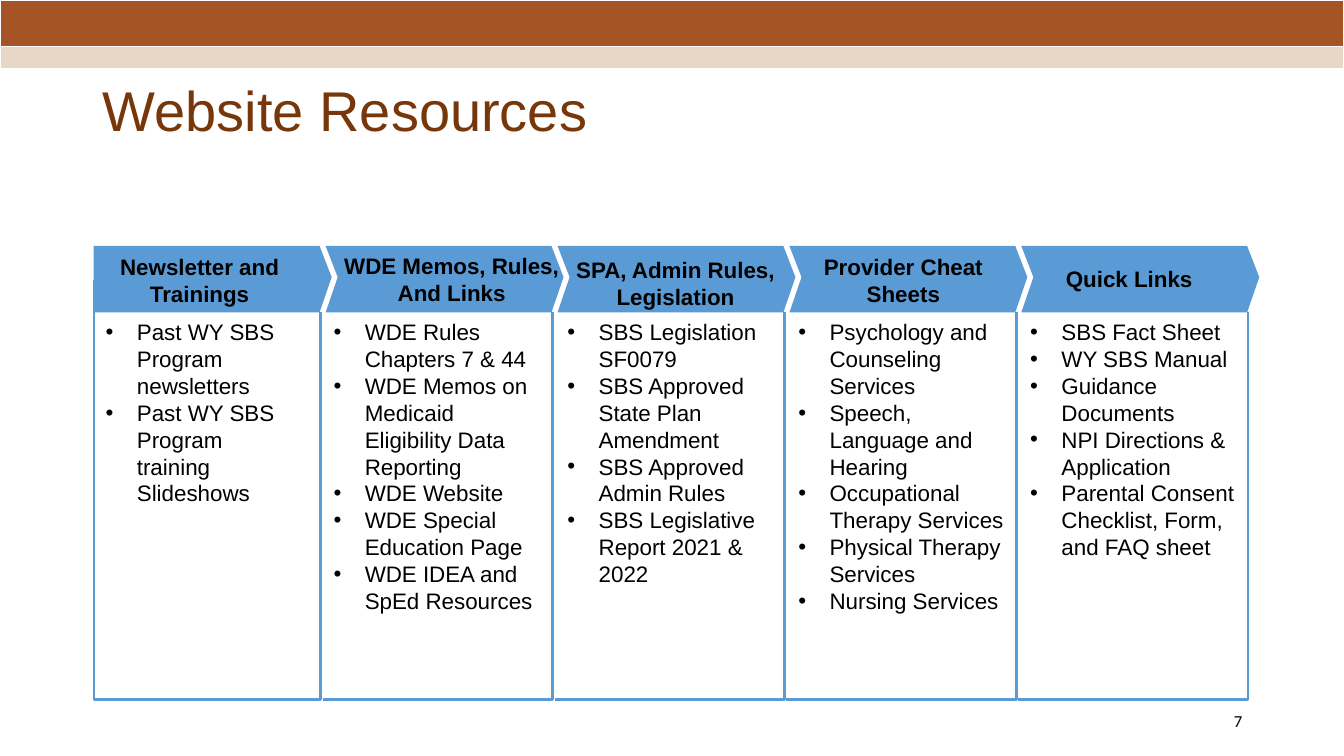
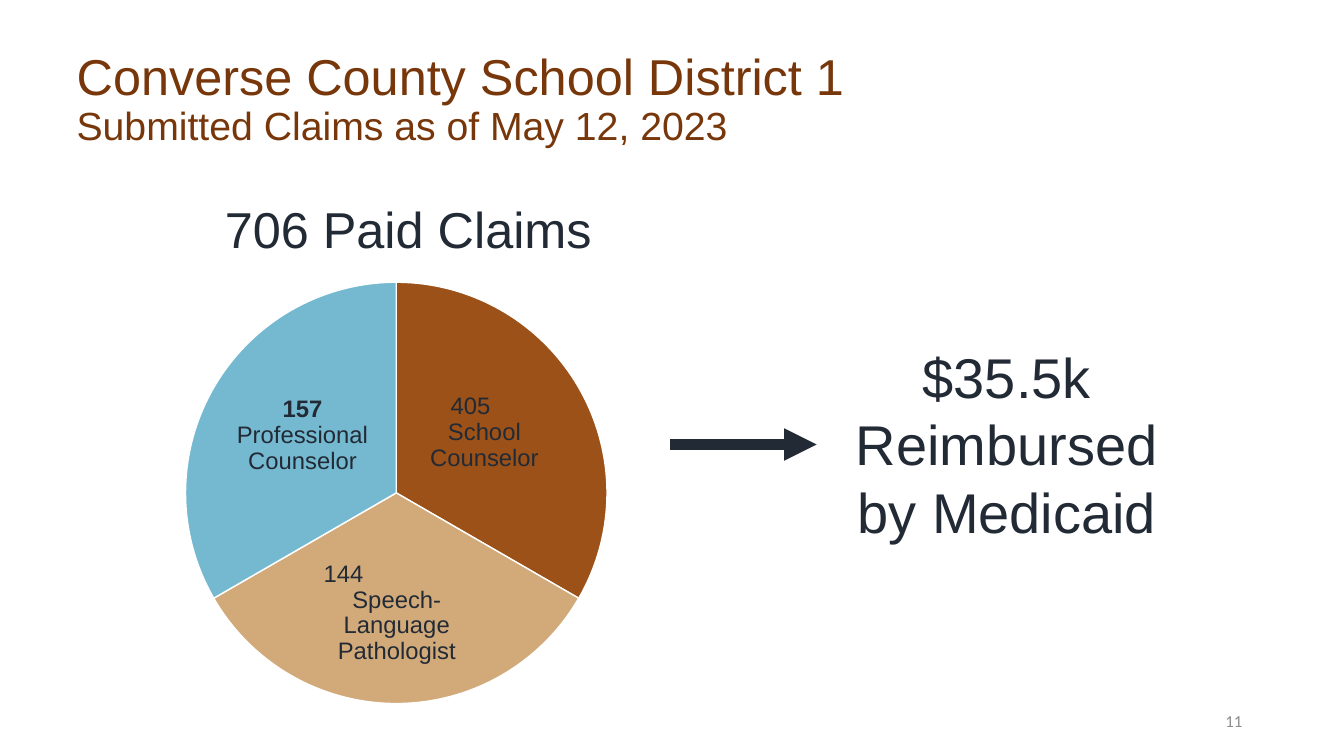
from pptx import Presentation
from pptx.dml.color import RGBColor
from pptx.enum.dml import MSO_LINE
from pptx.enum.shapes import MSO_CONNECTOR, MSO_SHAPE
from pptx.enum.text import MSO_ANCHOR, MSO_AUTO_SIZE, PP_ALIGN
from pptx.oxml.ns import qn
from pptx.util import Inches, Pt
from lxml.etree import SubElement

# Shared style
TITLE_BROWN = RGBColor(0x77, 0x37, 0x0B)
BAND_BROWN = RGBColor(0xA5, 0x55, 0x25)
BAND_SAND = RGBColor(0xE6, 0xD8, 0xC5)
BLUE = RGBColor(0x5B, 0x9B, 0xD5)
NAVY = RGBColor(0x22, 0x2A, 0x35)
GRAY = RGBColor(0x8C, 0x8C, 0x8C)
BLACK = RGBColor(0, 0, 0)
WHITE = RGBColor(0xFF, 0xFF, 0xFF)
SLIDE_W, SLIDE_H = 13.33, 7.5

# Content: heading lines, heading (centre, top), list (left, width), list items
RESOURCES = [
    (["Newsletter and", "Trainings"], (1.98, 2.51), (0.95, 2.13),
     ["Past WY SBS Program newsletters",
      "Past WY SBS Program training Slideshows"]),
    (["WDE Memos, Rules,", "And Links"], (4.48, 2.5), (3.21, 2.26),
     ["WDE Rules Chapters 7 & 44",
      "WDE Memos on Medicaid Eligibility Data Reporting",
      "WDE Website", "WDE Special Education Page",
      "WDE IDEA and SpEd Resources"]),
    (["SPA, Admin Rules,", "Legislation"], (6.7, 2.54), (5.53, 2.26),
     ["SBS Legislation SF0079", "SBS Approved State Plan Amendment",
      "SBS Approved Admin Rules", "SBS Legislative Report 2021 & 2022"]),
    (["Provider Cheat", "Sheets"], (8.96, 2.51), (7.82, 2.26),
     ["Psychology and Counseling Services", "Speech, Language and Hearing",
      "Occupational Therapy Services", "Physical Therapy Services",
      "Nursing Services"]),
    (["Quick Links"], (11.2, 2.63), (10.12, 2.23),
     ["SBS Fact Sheet", "WY SBS Manual", "Guidance Documents",
      "NPI Directions & Application",
      "Parental Consent Checklist, Form, and FAQ sheet"]),
]

# Colour, label box, count, count format, role
CLAIMS = [
    (RGBColor(0x9B, 0x51, 0x18), (4.09, 3.59, 1.43, 1.41), "405",
     dict(align=PP_ALIGN.LEFT, indent=0.36), "School Counselor"),
    (RGBColor(0xD2, 0xAA, 0x7A), (2.99, 5.44, 1.89, 1.29), "144",
     dict(align=PP_ALIGN.LEFT, indent=0.2), "Speech-Language Pathologist"),
    (RGBColor(0x75, 0xB9, 0xD1), (2.29, 3.63, 1.42, 1.39), "157",
     dict(bold=True), "Professional Counselor"),
]


def write(tf, lines, **fmt):
    """Fill a text frame; a line is text or (text, format overrides)."""
    for i, line in enumerate(lines):
        text, extra = (line, {}) if isinstance(line, str) else line
        f = {"size": 16, "color": BLACK, "font": "Arial", "bold": False,
             "align": PP_ALIGN.LEFT, "spacing": None, "bullet": False,
             "indent": 0, **fmt, **extra}
        p = tf.paragraphs[0] if i == 0 else tf.add_paragraph()
        pPr = p._p.get_or_add_pPr()
        if f["bullet"]:
            pPr.set("marL", str(Inches(0.31)))
            pPr.set("indent", str(Inches(-0.31)))
            SubElement(pPr, qn("a:buFont"), typeface="Arial")
            SubElement(pPr, qn("a:buChar"), char="•")
        elif f["indent"]:
            pPr.set("marL", str(Inches(f["indent"])))
        p.alignment = f["align"]
        if f["spacing"]:
            p.line_spacing = f["spacing"]
        r = p.add_run()
        r.text = text
        r.font.name, r.font.size = f["font"], Pt(f["size"])
        r.font.bold = f["bold"]
        r.font.color.rgb = f["color"]


def add_text(s, box, lines, inset=None, anchor=MSO_ANCHOR.TOP, **fmt):
    tf = s.shapes.add_textbox(*map(Inches, box)).text_frame
    tf.word_wrap = True
    tf.vertical_anchor = anchor
    if inset is not None:
        tf.margin_left = tf.margin_right = Inches(inset)
        tf.margin_top = tf.margin_bottom = Inches(inset)
    write(tf, lines, **fmt)


def paint(sp, fill=None, line=None, width=1):
    sp.shadow.inherit = False
    if fill is None:
        sp.fill.background()
    else:
        sp.fill.solid()
        sp.fill.fore_color.rgb = fill
    if line is None:
        sp.line.fill.background()
    else:
        sp.line.color.rgb = line
        sp.line.width = Pt(width)


def add_outline(s, points, close, **style):
    pts = [(Inches(x), Inches(y)) for x, y in points]
    fb = s.shapes.build_freeform(*pts[0])
    fb.add_line_segments(pts[1:], close=close)
    paint(fb.convert_to_shape(), **style)


def add_slide(prs, left, top, title, size, number, number_color):
    s = prs.slides.add_slide(prs.slide_layouts[5])
    sp = s.shapes.title
    sp.left, sp.top = Inches(left), Inches(top)
    sp.width, sp.height = Inches(11.5), Inches(1.45)
    tf = sp.text_frame
    tf.auto_size = MSO_AUTO_SIZE.NONE
    tf.vertical_anchor = MSO_ANCHOR.MIDDLE
    write(tf, title, size=size, color=TITLE_BROWN, spacing=0.9)
    add_text(s, (9.42, 6.95, 3, 0.4), [number], anchor=MSO_ANCHOR.MIDDLE,
             size=12, font="Calibri", color=number_color,
             align=PP_ALIGN.RIGHT)
    return s


def build_resources(prs):
    s = add_slide(prs, 0.92, 0.4, ["Website Resources"], 40, "7", BLACK)

    # Top bands
    for top, height, color in [(0.12, 0.56, BAND_SAND), (0, 0.46, BAND_BROWN)]:
        sp = s.shapes.add_shape(MSO_SHAPE.RECTANGLE, 0, Inches(top),
                                Inches(SLIDE_W), Inches(height))
        paint(sp, color, WHITE)

    # Columns: open frame, chevron heading, bullet list
    pitch, top, bottom = 2.3, 2.44, 3.1
    for i, (heading, (cx, y), (left, width), items) in enumerate(RESOURCES):
        x = 0.9 + pitch * i
        frame = [(x + 2.28, bottom), (x + 2.28, 6.94), (x, 6.94)]
        if i == 0:
            frame[2:] = [(0.93, 6.94), (0.93, 2.78)]
        add_outline(s, frame, False, line=BLUE, width=1.75)

        x = 0.93 + pitch * i
        chevron = [(x, top), (x + 2.24, top), (x + 2.36, 2.75),
                   (x + 2.24, bottom), (x, bottom)]
        if i > 0:
            chevron.append((x + 0.12, 2.75))
        add_outline(s, chevron, True, fill=BLUE)

        add_text(s, (cx - 1.1, y, 2.2, 0.54), heading, inset=0, bold=True,
                 align=PP_ALIGN.CENTER)
        add_text(s, (left, bottom + 0.01, width, 3.33), items, bullet=True)


def build_claims(prs):
    title = ["Converse County School District 1",
             ("Submitted Claims as of May 12, 2023", {"size": 28})]
    s = add_slide(prs, 0.66, 0.27, title, 36, "11", GRAY)

    # Equal pie sectors, clockwise from the top
    sweep = 360 / len(CLAIMS)
    for i, (color, *_) in enumerate(CLAIMS):
        sp = s.shapes.add_shape(MSO_SHAPE.PIE, Inches(1.84), Inches(2.8),
                                Inches(4.18), Inches(4.18))
        start = 270 + sweep * i
        for k, angle in enumerate((start, start + sweep)):
            sp.adjustments[k] = angle % 360 * 0.6
        paint(sp, color, WHITE)
    for _, box, count, count_format, role in CLAIMS:
        add_text(s, box, [(count, count_format), role], inset=0.02,
                 anchor=MSO_ANCHOR.MIDDLE, size=17, color=NAVY,
                 align=PP_ALIGN.CENTER, spacing=0.9)

    # Totals
    for box, lines, size in [
            ((1.69, 1.92, 4.72, 0.71), ["706 Paid Claims"], 36),
            ((8.3, 3.35, 3.37, 2.12), ["$35.5k", "Reimbursed by Medicaid"], 40)]:
        add_text(s, box, lines, size=size, color=NAVY, align=PP_ALIGN.CENTER)

    # Arrow from claims to reimbursement
    arrow = s.shapes.add_connector(MSO_CONNECTOR.STRAIGHT, Inches(6.65),
                                   Inches(4.41), Inches(8.1), Inches(4.41))
    arrow.line.color.rgb = NAVY
    arrow.line.width = Pt(7.75)
    arrow.line.dash_style = MSO_LINE.SOLID
    spPr = arrow._element.spPr
    SubElement(spPr.find(qn("a:ln")), qn("a:tailEnd"), type="triangle")
    SubElement(spPr, qn("a:effectLst"))


def main():
    prs = Presentation()
    prs.slide_width, prs.slide_height = Inches(SLIDE_W), Inches(SLIDE_H)
    build_resources(prs)
    build_claims(prs)
    prs.save("out.pptx")


if __name__ == "__main__":
    main()
